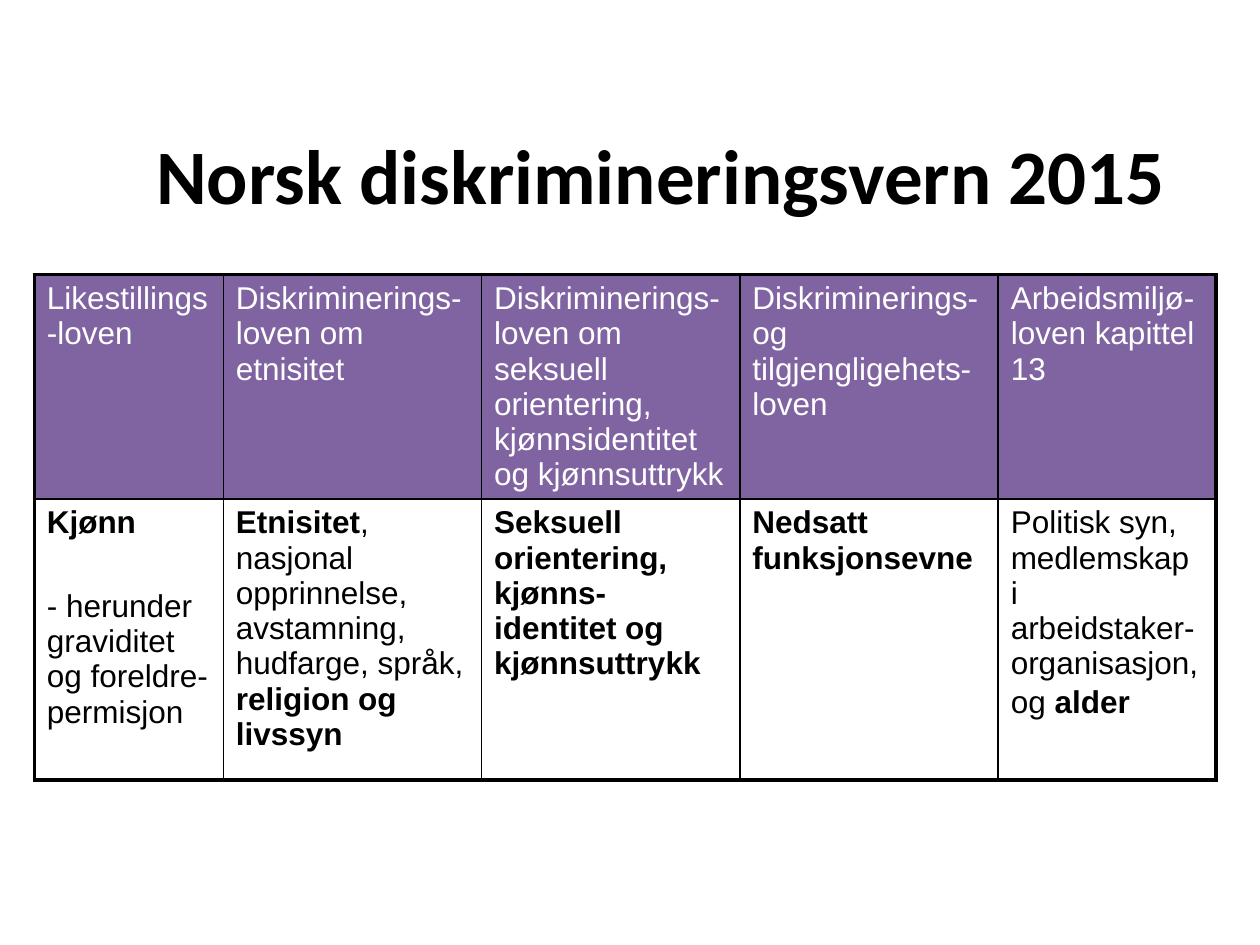
"""Build a slide with a table of Norwegian anti-discrimination law in 2015."""
import pptx
import pptx.dml.color
import pptx.enum.text
import pptx.oxml
import pptx.oxml.ns
import pptx.util

Pt = pptx.util.Pt
RGBColor = pptx.dml.color.RGBColor
BLACK = RGBColor(0x00, 0x00, 0x00)
WHITE = RGBColor(0xFF, 0xFF, 0xFF)
PURPLE = RGBColor(0x80, 0x64, 0xA2)

TITLE = "Norsk diskrimineringsvern 2015"
LAWS = [
    "Likestillings-loven",
    "Diskriminerings-loven om etnisitet",
    "Diskriminerings-loven om seksuell orientering, kjønnsidentitet og kjønnsuttrykk",
    "Diskriminerings- og tilgjengligehets-loven",
    "Arbeidsmiljø-loven kapittel 13",
]
BOLD = {"bold": True}
GROUNDS = [
    [[("Kjønn", BOLD)], [("- herunder graviditet og foreldre-permisjon", {})]],
    [[("Etnisitet", BOLD),
      (", nasjonal opprinnelse, avstamning, hudfarge, språk, ", {}),
      ("religion og livssyn", BOLD)]],
    [[("Seksuell orientering, kjønns-identitet og kjønnsuttrykk", BOLD)]],
    [[("Nedsatt funksjonsevne", BOLD)]],
    [[("Politisk syn, medlemskap i arbeidstaker-organisasjon, og ", {}),
      ("alder", BOLD), (" ", {"size": 20})]],
]
ROWS = [[[[(law, {})]] for law in LAWS], GROUNDS]
COLUMN_WIDTHS = [108, 147.6, 147.6, 147.6, 124.6]
ROW_HEIGHTS = [128, 160.5]
TABLE_LEFT, TABLE_TOP = 19.6, 157
PARAGRAPH_GAP = 27.5
INNER_LINE, OUTER_LINE = 1, 2.25


def add_text(paragraph, text, size=18, font="Arial", color=BLACK, bold=False):
    run = paragraph.add_run()
    run.text = text
    run.font.size = Pt(size)
    run.font.name = font
    run.font.bold = bold
    run.font.color.rgb = color


def add_border(cell, side, width):
    properties = cell._tc.get_or_add_tcPr()
    properties.append(pptx.oxml.parse_xml(
        f'<a:ln{side} {pptx.oxml.ns.nsdecls("a")} w="{Pt(width)}">'
        f'<a:solidFill><a:srgbClr val="{BLACK}"/></a:solidFill></a:ln{side}>'))


def fill_cell(cell, paragraphs, color):
    frame = cell.text_frame
    for index, runs in enumerate(paragraphs):
        paragraph = frame.add_paragraph() if index else frame.paragraphs[0]
        paragraph.space_before = Pt(PARAGRAPH_GAP if index else 0)
        for text, style in runs:
            add_text(paragraph, text, color=color, **style)


def add_law_table(slide):
    row_count, column_count = len(ROWS), len(LAWS)
    shape = slide.shapes.add_table(
        row_count, column_count, Pt(TABLE_LEFT), Pt(TABLE_TOP),
        Pt(sum(COLUMN_WIDTHS)), Pt(sum(ROW_HEIGHTS)))
    table = shape.table
    table.first_row = False
    table.horz_banding = False
    for column, width in zip(table.columns, COLUMN_WIDTHS):
        column.width = Pt(width)
    for row_index, contents in enumerate(ROWS):
        table.rows[row_index].height = Pt(ROW_HEIGHTS[row_index])
        is_header = row_index == 0
        for column_index, paragraphs in enumerate(contents):
            cell = table.cell(row_index, column_index)
            outer_sides = {
                "L": column_index == 0,
                "R": column_index == column_count - 1,
                "T": is_header,
                "B": row_index == row_count - 1,
            }
            for side, is_outer in outer_sides.items():
                add_border(cell, side, OUTER_LINE if is_outer else INNER_LINE)
            if is_header:
                cell.fill.solid()
                cell.fill.fore_color.rgb = PURPLE
            else:
                cell.fill.background()
            fill_cell(cell, paragraphs, WHITE if is_header else BLACK)


def add_title(slide):
    title = slide.shapes.title
    title.left, title.top, title.width, title.height = Pt(72), Pt(66), Pt(612), Pt(66)
    frame = title.text_frame
    frame.word_wrap = True
    frame.vertical_anchor = pptx.enum.text.MSO_ANCHOR.MIDDLE
    paragraph = frame.paragraphs[0]
    paragraph.alignment = pptx.enum.text.PP_ALIGN.CENTER
    add_text(paragraph, TITLE, size=44, font="Calibri", bold=True)


def main():
    presentation = pptx.Presentation()
    presentation.slide_width, presentation.slide_height = Pt(720), Pt(540)
    slide = presentation.slides.add_slide(presentation.slide_layouts[5])
    add_title(slide)
    add_law_table(slide)
    presentation.save("out.pptx")


if __name__ == "__main__":
    main()
